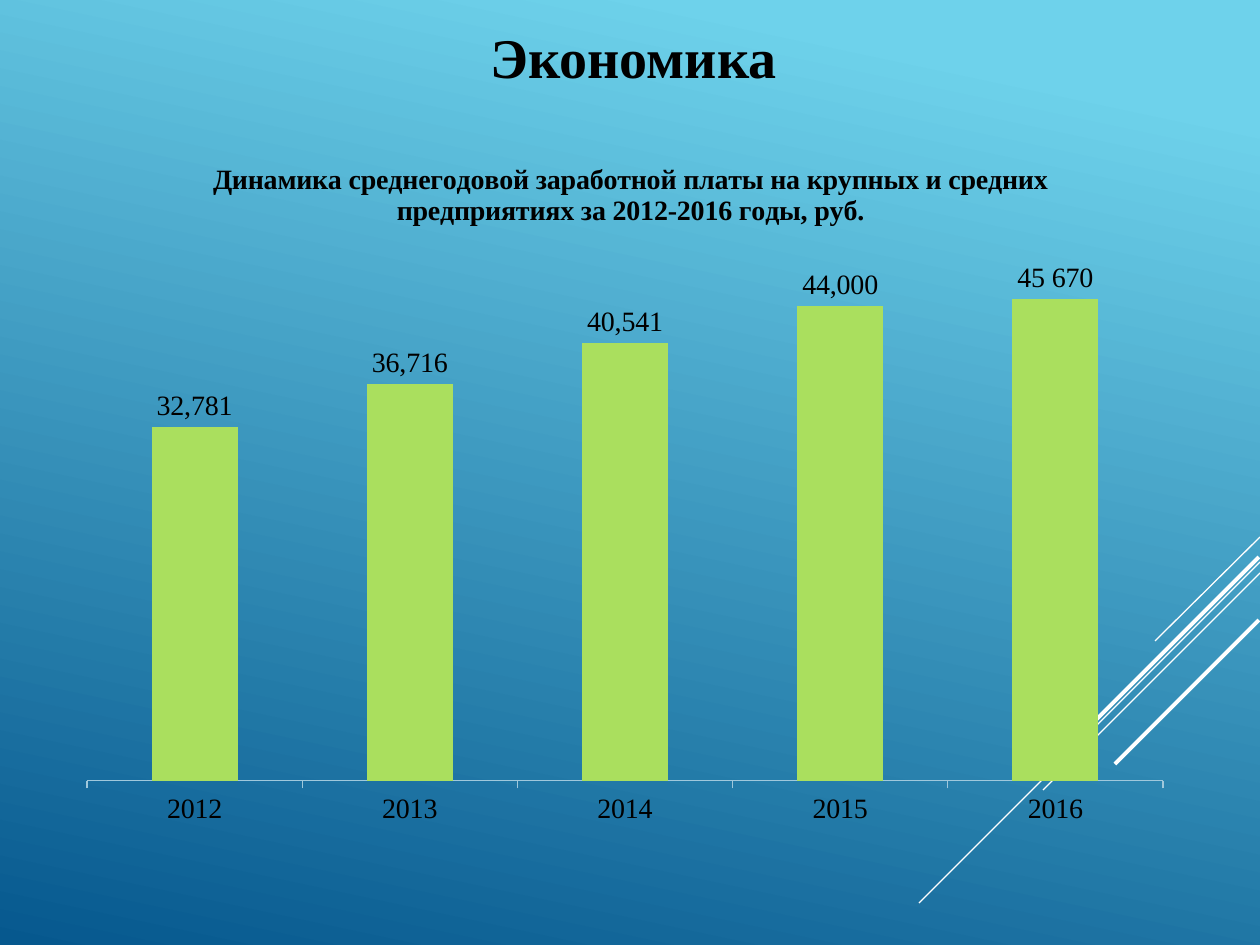
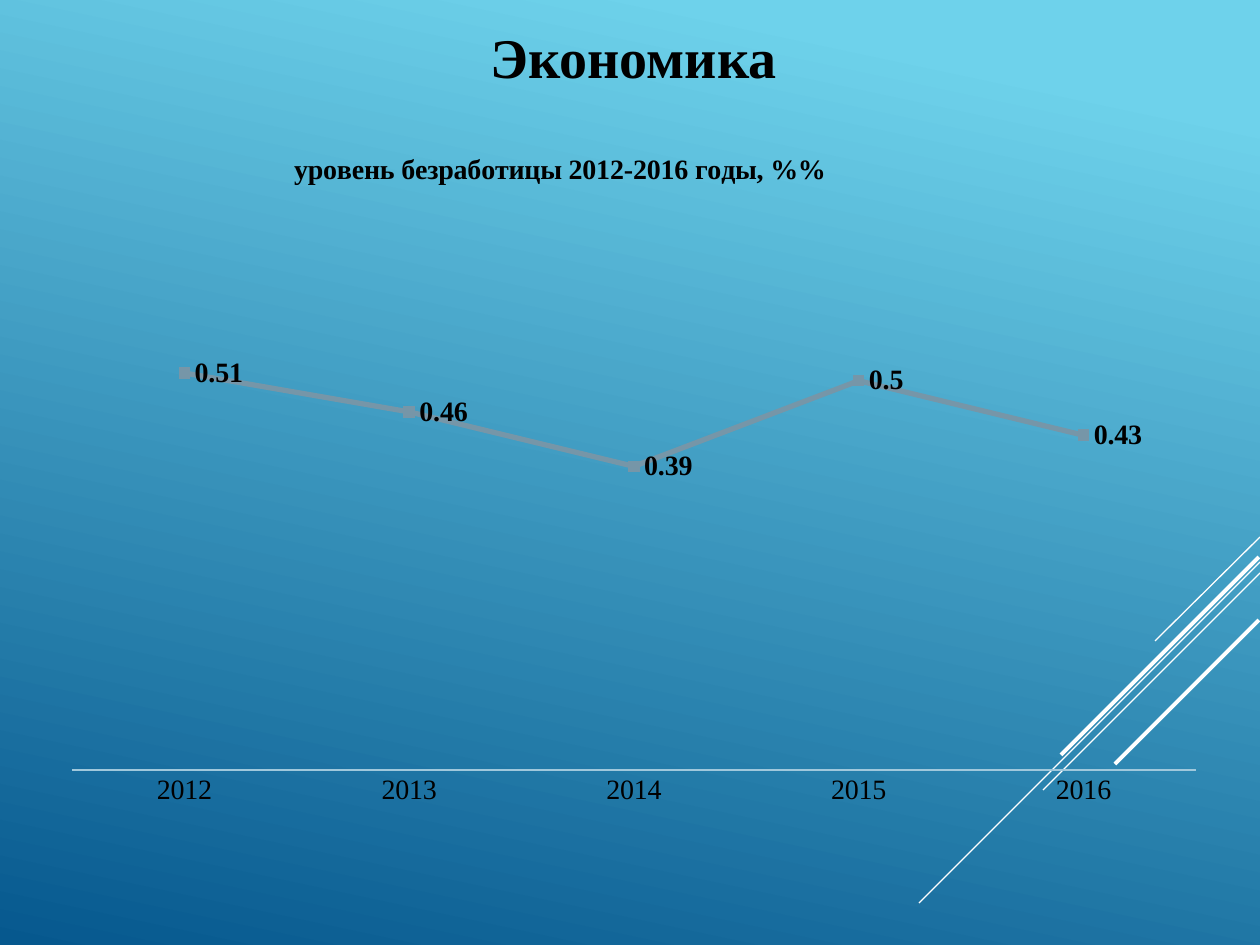
from lxml import etree
from pptx import Presentation
from pptx import util as u
from pptx.chart.data import CategoryChartData
from pptx.dml.color import RGBColor
from pptx.enum import chart as ch, shapes, text
from pptx.oxml.ns import qn

PX = 914400 / 126
FONT = "Times New Roman"
BLACK = RGBColor(0, 0, 0)
WHITE = RGBColor(0xFF, 0xFF, 0xFF)
SKY = RGBColor(0x6E, 0xD2, 0xEB)
DEEP = RGBColor(0x06, 0x58, 0x8E)
GREEN = RGBColor(0xAA, 0xDF, 0x5E)
GREY = RGBColor(0x76, 0x96, 0xA8)
MARKER = RGBColor(0x8A, 0x90, 0x99)
AXIS = RGBColor(0xA0, 0xC8, 0xDC)

HEADING = "Экономика"
HEADING_BOX = (35, 16, 1197, 81)
YEARS = ["2012", "2013", "2014", "2015", "2016"]
STRIPES = [
    (1260, 537, 1155, 641, 0.75),
    (1260, 562, 919, 903, 0.75),
    (1260, 573, 1043, 790, 0.75),
    (1259, 557, 1061, 755, 2.25),
    (1259, 620, 1115, 764, 2.25),
]
WAGES = dict(
    title="Динамика среднегодовой заработной платы на крупных и средних предприятиях за 2012-2016 годы, руб.",
    kind=ch.XL_CHART_TYPE.COLUMN_CLUSTERED,
    values=[32781, 36716, 40541, 44000, 44600],
    box=(64, 125, 1121, 714), title_at=(208, 156), plot=(87, 241, 1076, 540),
    top=50000, number_format="#,##0", tick=ch.XL_TICK_MARK.OUTSIDE,
    label_at=ch.XL_LABEL_POSITION.OUTSIDE_END, bold_labels=False,
    point_labels={4: "45 670"},
)
UNEMPLOYMENT = dict(
    title="уровень безработицы 2012-2016 годы, %%",
    kind=ch.XL_CHART_TYPE.LINE_MARKERS_STACKED,
    values=[0.51, 0.46, 0.39, 0.5, 0.43],
    box=(35, 125, 1197, 774), title_at=(289, 146), plot=(72, 303, 1124, 467),
    top=0.6, number_format="General", tick=ch.XL_TICK_MARK.NONE,
    label_at=ch.XL_LABEL_POSITION.RIGHT, bold_labels=True,
    point_labels={},
)


def px(*lengths):
    return [u.Emu(round(n * PX)) for n in lengths]


def style(font, size, bold=False):
    font.name, font.size, font.bold = FONT, u.Pt(size), bold
    font.color.rgb = BLACK


def paint_background(master):
    fill = master.background.fill
    fill.gradient()
    fill.gradient_angle = 258
    for stop, color, position in zip(fill.gradient_stops, (SKY, DEEP), (0.1, 1)):
        stop.color.rgb = color
        stop.position = position


def add_stripes(slide):
    for x1, y1, x2, y2, width in STRIPES:
        stripe = slide.shapes.add_connector(
            shapes.MSO_CONNECTOR.STRAIGHT, *px(x1, y1, x2, y2))
        stripe.line.color.rgb = WHITE
        stripe.line.width = u.Pt(width)
        etree.SubElement(stripe.element.spPr, qn("a:effectLst"))


def add_heading(slide):
    heading = slide.shapes.title
    heading.left, heading.top, heading.width, heading.height = px(*HEADING_BOX)
    frame = heading.text_frame
    frame.text = HEADING
    frame.word_wrap = True
    frame.auto_size = text.MSO_AUTO_SIZE.NONE
    frame.vertical_anchor = text.MSO_ANCHOR.TOP
    frame.paragraphs[0].alignment = text.PP_ALIGN.CENTER
    style(frame.paragraphs[0].runs[0].font, 32, True)


def place(part, index, box, area):
    layout = part.find(qn("c:layout"))
    if layout is None:
        layout = etree.Element(qn("c:layout"))
        part.insert(index, layout)
    manual = etree.SubElement(layout, qn("c:manualLayout"))
    left, top, width, height = box
    settings = [("xMode", "edge"), ("yMode", "edge"),
                ("x", (area[0] - left) / width), ("y", (area[1] - top) / height)]
    if len(area) == 4:
        settings = [("layoutTarget", "inner"), *settings,
                    ("w", area[2] / width), ("h", area[3] / height)]
    for tag, value in settings:
        etree.SubElement(manual, qn("c:" + tag)).set("val", str(value))


def format_axes(chart, topic):
    years = chart.category_axis
    years.major_tick_mark = topic["tick"]
    years.minor_tick_mark = ch.XL_TICK_MARK.NONE
    years.has_major_gridlines = False
    years.format.line.color.rgb = AXIS
    years.format.line.width = u.Pt(0.75)
    style(years.tick_labels.font, 16)
    scale = chart.value_axis
    scale.minimum_scale, scale.maximum_scale = 0, topic["top"]
    scale.has_major_gridlines = False
    scale.visible = False


def format_series(series, topic):
    if topic["kind"] == ch.XL_CHART_TYPE.COLUMN_CLUSTERED:
        series.format.fill.solid()
        series.format.fill.fore_color.rgb = GREEN
    else:
        series.smooth = False
        series.format.line.color.rgb = GREY
        series.format.line.width = u.Pt(3)
        series.marker.style = ch.XL_MARKER_STYLE.SQUARE
        series.marker.size = 6
        series.marker.format.fill.solid()
        series.marker.format.fill.fore_color.rgb = MARKER
        series.marker.format.line.fill.background()
    labels = series.data_labels
    labels.show_value = True
    labels.number_format = topic["number_format"]
    labels.number_format_is_linked = False
    labels.position = topic["label_at"]
    style(labels.font, 16, topic["bold_labels"])
    for index, caption in topic["point_labels"].items():
        label = series.points[index].data_label
        label.text_frame.text = caption
        style(label.text_frame.paragraphs[0].runs[0].font, 16)
        label.position = topic["label_at"]


def add_topic_chart(slide, topic):
    data = CategoryChartData()
    data.categories = YEARS
    data.add_series("Series 1", topic["values"])
    chart = slide.shapes.add_chart(topic["kind"], *px(*topic["box"]), data).chart
    style(chart.font, 10)
    chart.has_legend = False
    chart.has_title = True
    title = chart.chart_title
    title.text_frame.text = topic["title"]
    style(title.text_frame.paragraphs[0].runs[0].font, 16, True)
    place(title.element, 1, topic["box"], topic["title_at"])
    place(chart.element.find(".//" + qn("c:plotArea")), 0, topic["box"], topic["plot"])
    plot = chart.plots[0]
    plot.vary_by_categories = False
    if topic["kind"] == ch.XL_CHART_TYPE.COLUMN_CLUSTERED:
        plot.gap_width = 150
    format_axes(chart, topic)
    format_series(plot.series[0], topic)


def main():
    prs = Presentation()
    prs.slide_width, prs.slide_height = px(1260, 945)
    paint_background(prs.slide_master)
    for topic in (WAGES, UNEMPLOYMENT):
        slide = prs.slides.add_slide(prs.slide_layouts[5])
        add_stripes(slide)
        add_heading(slide)
        add_topic_chart(slide, topic)
    prs.save("out.pptx")


if __name__ == "__main__":
    main()
